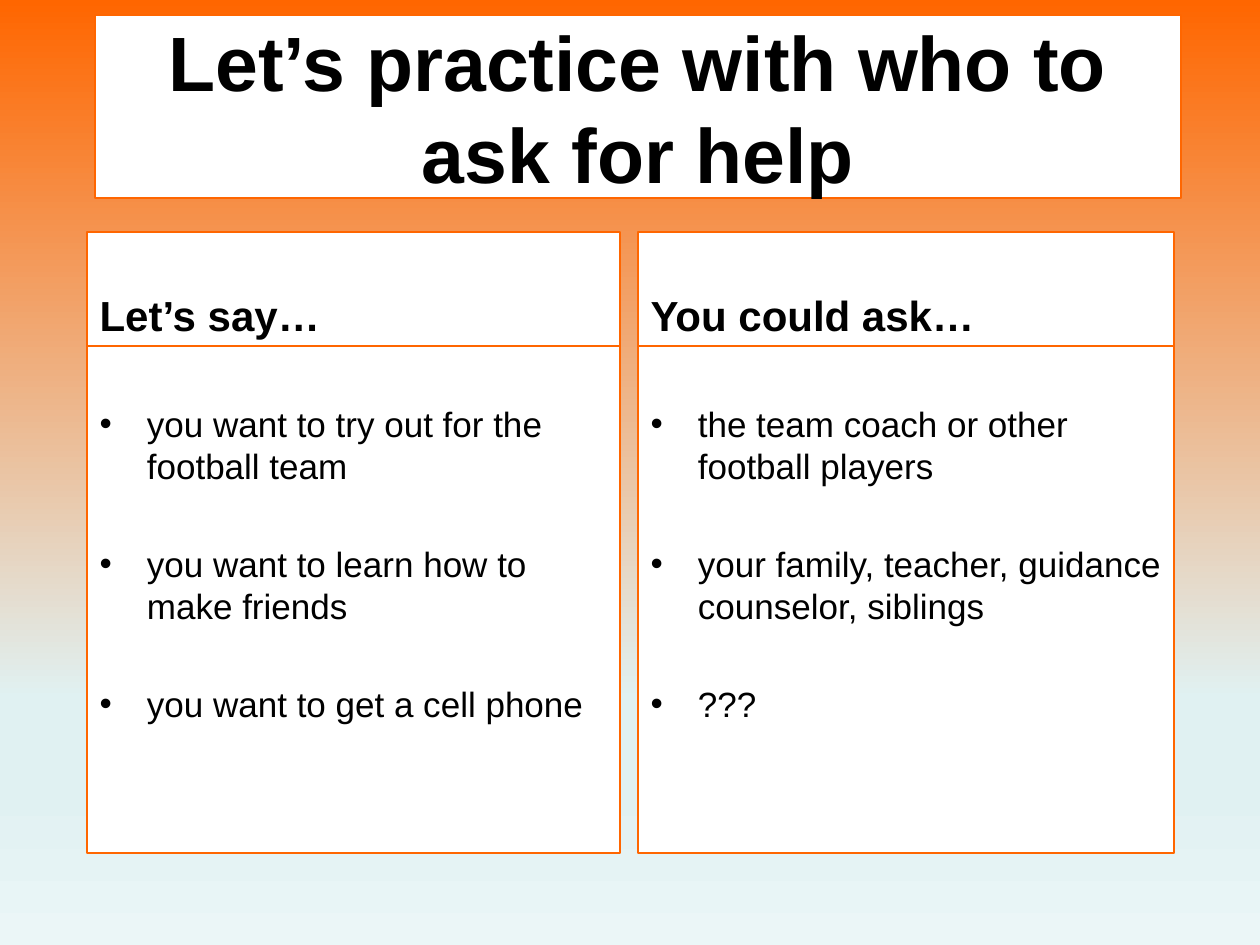
from copy import deepcopy

from pptx import Presentation
from pptx.dml.color import RGBColor
from pptx.enum.text import MSO_ANCHOR, MSO_AUTO_SIZE, PP_ALIGN
from pptx.util import Emu, Pt

PX = 914400 / 126
SKY = [(0, "FF6600"), (74, "E0F1F2"), (83, "E0F1F2"), (100, "EBF6F7")]
TITLE = {"size": Pt(44), "bold": True}
HEADING = {"size": Pt(24), "bold": True}
ITEM = {"size": Pt(20), "bold": False}
HEADING_HEIGHT = 114
COLUMNS = [
    ((87, 232, 533, 621), "Let’s say…",
     ["you want to try out for the football team",
      "you want to learn how to make friends",
      "you want to get a cell phone"]),
    ((638, 232, 536, 621), "You could ask…",
     ["the team coach or other football players",
      "your family, teacher, guidance counselor, siblings",
      "???"]),
]


def px(length):
    return Emu(round(length * PX))


def color(hex_code):
    return RGBColor.from_string(hex_code)


def paint_background(slide):
    fill = slide.background.fill
    fill.gradient()
    fill.gradient_angle = 270
    stops = fill.gradient_stops
    stop_list = stops[0]._gs.getparent()
    for _ in range(len(SKY) - len(stops)):
        stop_list.append(deepcopy(stop_list[-1]))
    for stop, (position, hex_code) in zip(fill.gradient_stops, SKY):
        stop.color.rgb = color(hex_code)
        stop.position = position / 100


def fill_panel(panel, box, paragraphs, style, anchor):
    """Place a white, orange-edged placeholder and write its paragraphs."""
    for side, length in zip(("left", "top", "width", "height"), box):
        setattr(panel, side, px(length))
    panel.fill.solid()
    panel.fill.fore_color.rgb = color("FFFFFF")
    panel.line.color.rgb = color("FF6600")
    panel.line.width = Pt(0.75)
    frame = panel.text_frame
    frame.text = "\n".join(paragraphs)
    frame.word_wrap = True
    frame.auto_size = MSO_AUTO_SIZE.NONE
    frame.vertical_anchor = anchor
    for paragraph in frame.paragraphs:
        paragraph.space_before = Pt(0)
        for run in paragraph.runs:
            run.font.name = "Arial"
            run.font.color.rgb = color("000000")
            for name, value in style.items():
                setattr(run.font, name, value)
    return frame


def add_title(title, box, wording):
    frame = fill_panel(title, box, [wording], TITLE, MSO_ANCHOR.MIDDLE)
    frame.paragraphs[0].alignment = PP_ALIGN.CENTER


def add_column(heading, item_list, box, wording, items):
    left, top, width, height = box
    fill_panel(heading, (left, top, width, HEADING_HEIGHT), [wording],
               HEADING, MSO_ANCHOR.BOTTOM)
    list_box = (left, top + HEADING_HEIGHT, width, height - HEADING_HEIGHT)
    frame = fill_panel(item_list, list_box, items, ITEM, MSO_ANCHOR.TOP)
    frame.margin_top = px(56)
    for paragraph in frame.paragraphs[1:]:
        paragraph.space_before = Pt(32)


def main():
    deck = Presentation()
    deck.slide_width, deck.slide_height = px(1260), px(945)
    slide = deck.slides.add_slide(deck.slide_layouts.get_by_name("Comparison"))
    paint_background(slide)
    add_title(slide.shapes.title, (95, 15, 1086, 183),
              "Let’s practice with who to ask for help")
    for index, (box, wording, items) in enumerate(COLUMNS):
        heading = slide.placeholders[1 + 2 * index]
        item_list = slide.placeholders[2 + 2 * index]
        add_column(heading, item_list, box, wording, items)
    deck.save("out.pptx")


if __name__ == "__main__":
    main()
